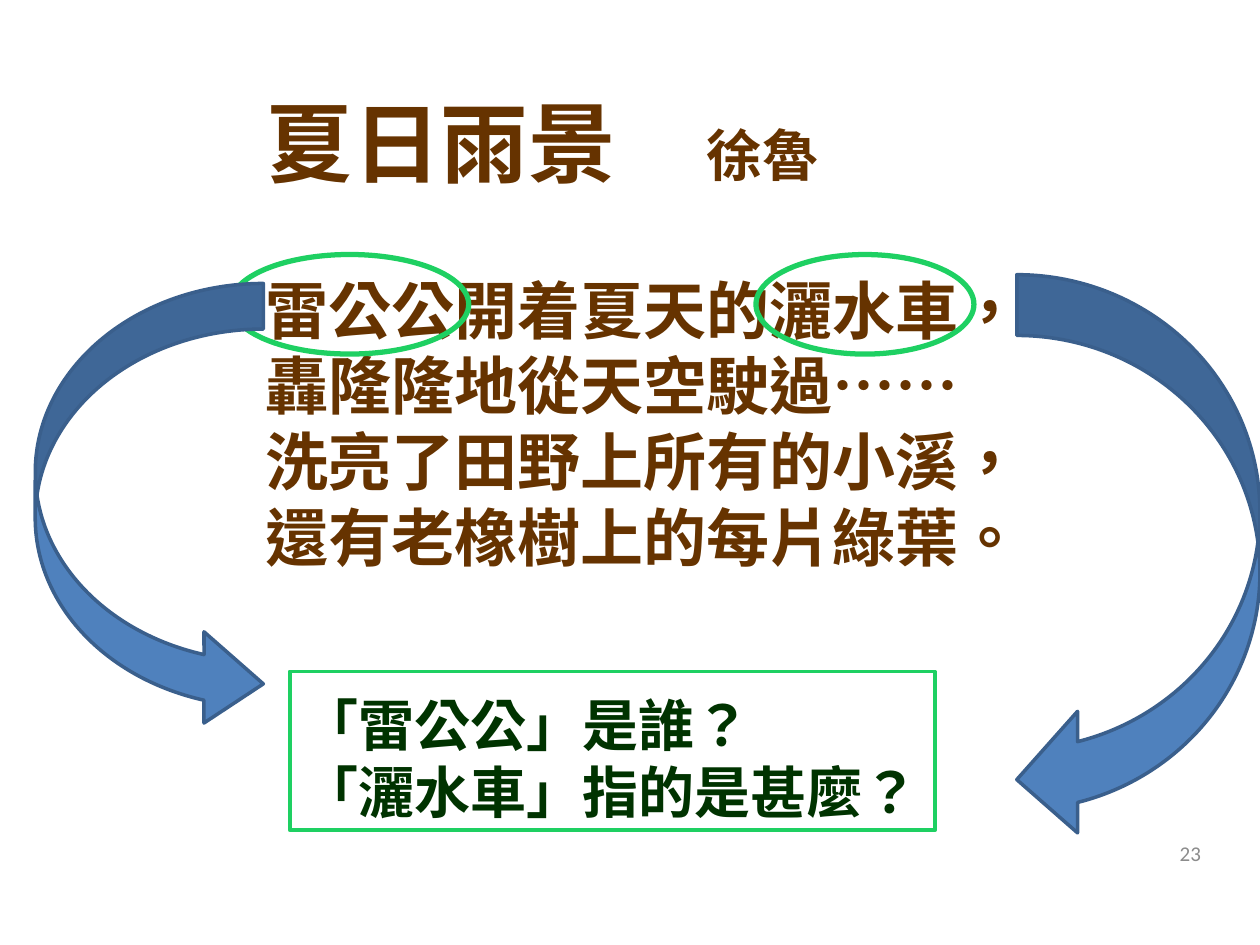
from pptx import Presentation
from pptx.dml.color import RGBColor
from pptx.enum.shapes import MSO_SHAPE
from pptx.enum.text import MSO_ANCHOR, PP_ALIGN
from pptx.oxml.ns import qn
from pptx.util import Inches, Pt
from lxml import etree

ELLIPSE, RECTANGLE = MSO_SHAPE.OVAL, MSO_SHAPE.RECTANGLE
RIGHT_ARROW, LEFT_ARROW = MSO_SHAPE.CURVED_RIGHT_ARROW, MSO_SHAPE.CURVED_LEFT_ARROW
TOP, MIDDLE = MSO_ANCHOR.TOP, MSO_ANCHOR.MIDDLE
LEFT, RIGHT = PP_ALIGN.LEFT, PP_ALIGN.RIGHT

WIDTH, HEIGHT = 10, 7.5
CJK_FONT = "Noto Sans CJK SC"
LINE_RATIO = 1.2
BROWN, GREEN, DARK_GREEN = "663300", "1ED062", "003300"
BLUE, DARK_BLUE, GREY, WHITE = "4F81BD", "3A5F8C", "8C8C8C", "FFFFFF"

POEM = [
    "雷公公開着夏天的灑水車，",
    "轟隆隆地從天空駛過……",
    "洗亮了田野上所有的小溪，",
    "還有老橡樹上的每片綠葉。",
]
QUESTIONS = ["「雷公公」是誰？", "「灑水車」指的是甚麼？"]


def rgb(value):
    return RGBColor.from_string(value)


def prepare_frame(shape, anchor=MIDDLE, wrap=False, margin_top=0.05):
    frame = shape.text_frame
    frame.word_wrap = wrap
    frame.vertical_anchor = anchor
    frame.margin_top = Inches(margin_top)
    return frame


def write(paragraph, text, size, color, font=CJK_FONT, bold=True, align=LEFT):
    """Append a formatted run, with line spacing set by the first run."""
    if not paragraph.runs:
        paragraph.alignment = align
        paragraph.line_spacing = Pt(size * LINE_RATIO)
    run = paragraph.add_run()
    run.text = text
    run.font.name = font
    run.font.size = Pt(size)
    run.font.bold = bold
    run.font.color.rgb = rgb(color)
    properties = run.font._element
    properties.set("lang", "zh-TW")
    east_asian = etree.Element(qn("a:ea"), typeface=CJK_FONT)
    properties.find(qn("a:latin")).addnext(east_asian)


def add_outline(slide, kind, box, line, line_width, fill=None, adjustments=()):
    shape = slide.shapes.add_shape(kind, *map(Inches, box))
    shape.shadow.inherit = False
    if fill:
        shape.fill.solid()
        shape.fill.fore_color.rgb = rgb(fill)
    else:
        shape.fill.background()
    shape.line.color.rgb = rgb(line)
    shape.line.width = Pt(line_width)
    for index, value in enumerate(adjustments):
        shape.adjustments[index] = value
    return shape


def add_page_number(slide):
    box = slide.shapes.add_textbox(*map(Inches, (7.3, 6.51, 2.33, 0.52)))
    frame = prepare_frame(box, wrap=True)
    write(frame.paragraphs[0], "23", 12, GREY, font="Calibri", bold=False, align=RIGHT)


def add_poem(slide):
    box = slide.shapes.add_textbox(*map(Inches, (2.01, 0.6, 6.2, 3.94)))
    frame = prepare_frame(box, anchor=TOP, margin_top=0.11)
    heading = frame.paragraphs[0]
    write(heading, "夏日雨景\t\t", 50, BROWN)
    write(heading, "徐魯", 32, BROWN)
    for index, verse in enumerate(POEM):
        paragraph = frame.add_paragraph()
        if index == 0:
            paragraph.space_before = Pt(44)
        write(paragraph, verse, 36, BROWN)


def add_questions(slide):
    box = add_outline(slide, RECTANGLE, (2.3, 5.33, 5.12, 1.26), GREEN, 2.25, fill=WHITE)
    frame = prepare_frame(box, margin_top=0.16)
    for index, question in enumerate(QUESTIONS):
        paragraph = frame.add_paragraph() if index else frame.paragraphs[0]
        write(paragraph, question, 32, DARK_GREEN, font="Arial")


def main():
    deck = Presentation()
    deck.slide_width, deck.slide_height = Inches(WIDTH), Inches(HEIGHT)
    slide = deck.slides.add_slide(deck.slide_layouts[6])

    add_page_number(slide)
    add_poem(slide)
    add_outline(slide, ELLIPSE, (6, 2.02, 1.73, 0.79), GREEN, 3)
    add_questions(slide)
    add_outline(slide, ELLIPSE, (1.83, 2.02, 1.89, 0.79), GREEN, 3)
    add_outline(slide, RIGHT_ARROW, (0.28, 2.25, 1.81, 3.54), DARK_BLUE, 2,
                fill=BLUE, adjustments=(0.2, 0.4, 0.26))
    add_outline(slide, LEFT_ARROW, (8.07, 2.18, 1.93, 4.49), DARK_BLUE, 2, fill=BLUE)

    deck.save("out.pptx")


if __name__ == "__main__":
    main()
